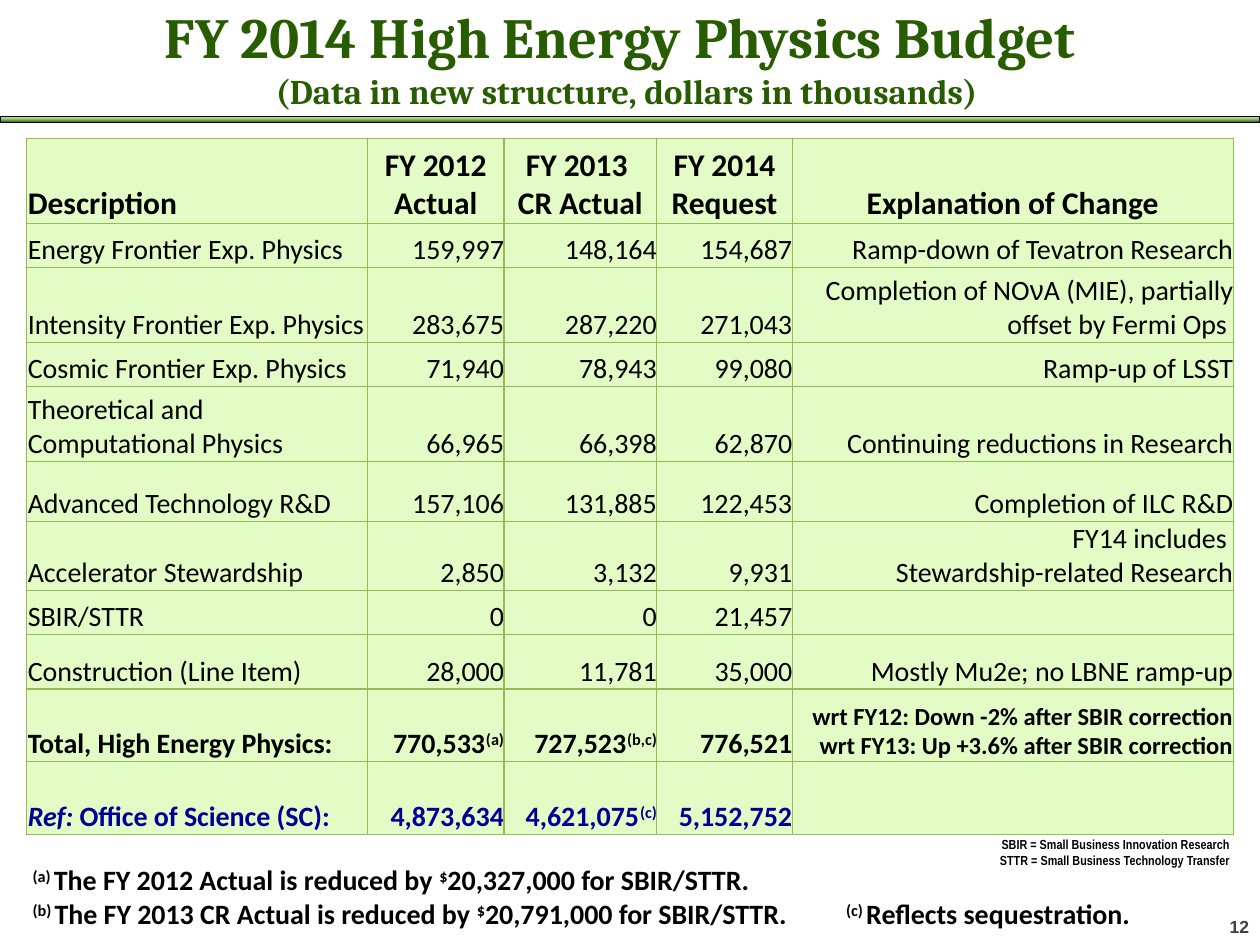
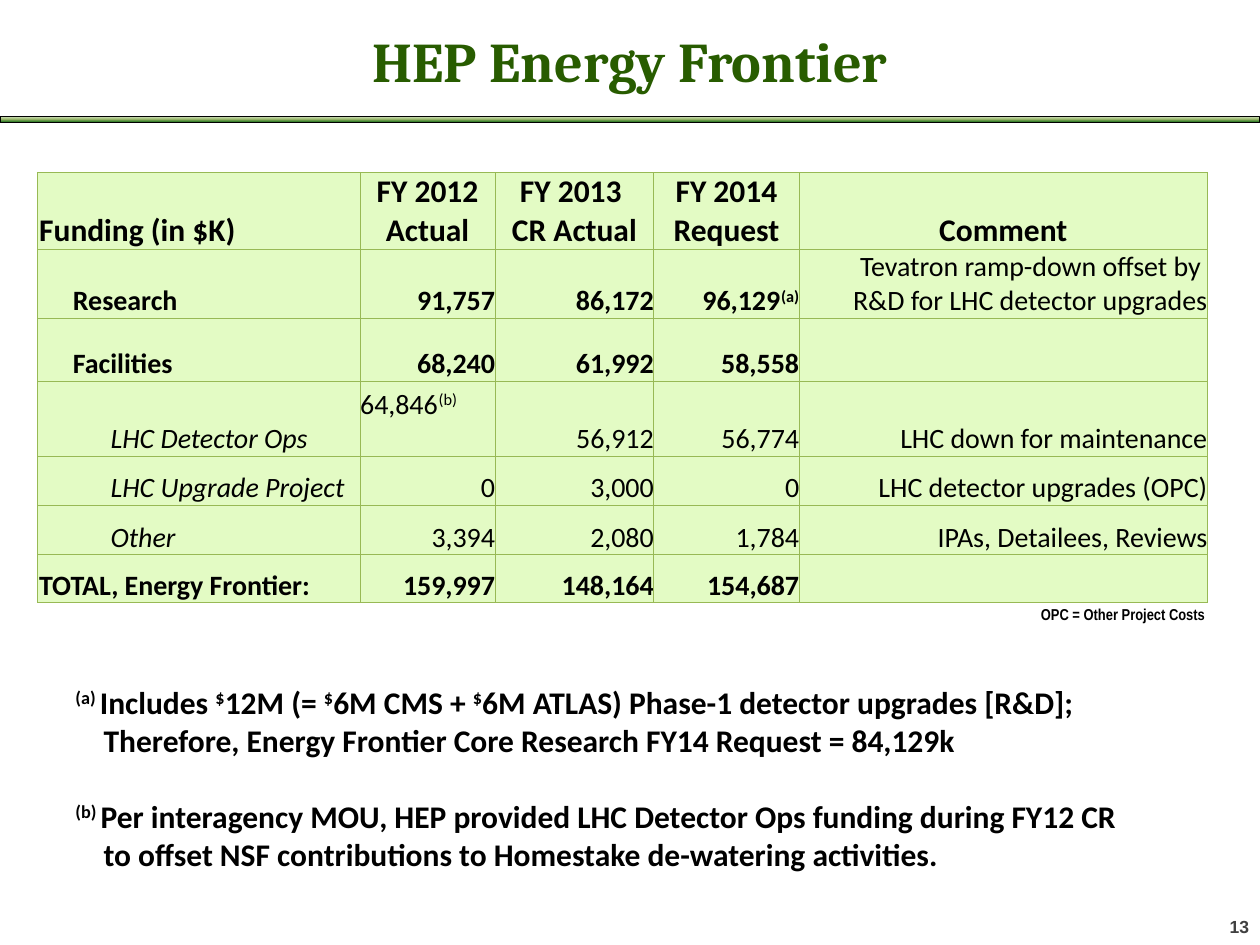
"""Build two budget slides with funding tables and footnotes."""
from copy import deepcopy

from lxml.etree import SubElement
from pptx import Presentation
from pptx.dml.color import RGBColor
from pptx.enum.shapes import MSO_SHAPE
from pptx.enum.text import MSO_ANCHOR, MSO_AUTO_SIZE, PP_ALIGN
from pptx.oxml.ns import qn
from pptx.util import Cm, Pt

TITLE_GREEN, INK, REF_BLUE, NUMBER_GREY = "285C00", "000000", "000099", "404040"
CELL_GREEN, GRID_GREEN = "E3FBC4", "98B955"
BAND_STOPS = [(0, "DDEBCF"), (0.5, "9CB86E"), (1, "156B13")]

TITLE = {"name": "Cambria", "size": Pt(32), "bold": True, "color": TITLE_GREEN}
BODY = {"name": "Calibri", "size": Pt(16), "bold": False, "color": INK}
BOLD = {"bold": True}
PLAIN = {"bold": False}
ITALIC = {"italic": True}
HEADER = {"size": Pt(18), "bold": True}
REFERENCE = {"bold": True, "color": REF_BLUE}
NUMBER = {"name": "Arial", "size": Pt(10), "bold": True, "color": NUMBER_GREY}
ABBREVIATION = {"name": "Arial Narrow", "size": Pt(7.5), "bold": True, "color": INK}
THIN_GAP = (" ", {"size": Pt(2)})
MARK_GAP = (" ", {"size": Pt(8)})
YEARS = ["FY 2012 Actual", "FY 2013 \nCR Actual", "FY 2014 Request"]

BUDGET_COLUMNS = [6.88, 2.75, 3.08, 2.73, 8.89]
BUDGET_ROWS = [
    (1.71, HEADER, ["Description", *YEARS, "Explanation of Change"]),
    (0.89, {}, ["Energy Frontier Exp. Physics", "159,997", "148,164", "154,687",
                "Ramp-down of Tevatron Research"]),
    (1.51, {}, ["Intensity Frontier Exp. Physics", "283,675", "287,220", "271,043",
                ["Completion of NO", ("ν", {"name": "Arial"}),
                 "A (MIE), partially offset by Fermi Ops "]]),
    (0.89, {}, ["Cosmic Frontier Exp. Physics", "71,940", "78,943", "99,080",
                "Ramp-up of LSST"]),
    (1.51, {}, ["Theoretical and Computational Physics", "66,965", "66,398", "62,870",
                "Continuing reductions in Research"]),
    (1.21, {}, ["Advanced Technology R&D", "157,106", "131,885", "122,453",
                "Completion of ILC R&D"]),
    (1.39, {}, ["Accelerator Stewardship", "2,850", "3,132", "9,931",
                "FY14 includes \nStewardship-related Research"]),
    (0.89, {}, ["SBIR/STTR", "0", "0", "21,457", ""]),
    (1.1, {}, ["Construction (Line Item)", "28,000", "11,781", "35,000",
               "Mostly Mu2e; no LBNE ramp-up"]),
    (1.46, BOLD, ["Total, High Energy Physics:", ["770,533", THIN_GAP, "^(a)^"],
                  ["727,523", THIN_GAP, "^(b,c)^"], "776,521",
                  [("wrt FY12: Down -2% after SBIR correction\n"
                    "wrt FY13: Up +3.6% after SBIR correction", {"size": Pt(14)})]]),
    (1.47, REFERENCE, [[("Ref: ", ITALIC), "Office of Science (SC):"], "4,873,634",
                       ["4,621,075", THIN_GAP, "^(c)^"], "5,152,752", ""]),
]

FRONTIER_COLUMNS = [6.5, 2.72, 3.2, 2.93, 8.23]
FRONTIER_ROWS = [
    (1.55, HEADER, ["Funding (in $K)", *YEARS, "Comment"]),
    (1.39, BOLD, ["Research", "91,757", "86,172", ["96,129", THIN_GAP, "^(a)^"],
                  [("Tevatron ramp-down offset by \nR&D for LHC detector upgrades", PLAIN)]]),
    (1.27, BOLD, ["Facilities", "68,240", "61,992", "58,558", ""]),
    (1.51, {}, [[("LHC Detector Ops", ITALIC)], ["64,846", THIN_GAP, "^(b)^"],
                "56,912", "56,774", "LHC down for maintenance"]),
    (0.99, {}, [[("LHC Upgrade Project", ITALIC)], "0", "3,000", "0",
                "LHC detector upgrades (OPC)"]),
    (0.99, {}, [[("Other", ITALIC)], "3,394", "2,080", "1,784",
                "IPAs, Detailees, Reviews"]),
    (0.97, BOLD, ["TOTAL, Energy Frontier:", "159,997", "148,164", "154,687", ""]),
]

BUDGET_NOTES = [
    "^(a)^", MARK_GAP, "The FY 2012 Actual is reduced by ^$^20,327,000 for SBIR/STTR.\n",
    "^(b)^", MARK_GAP, "The FY 2013 CR Actual is reduced by ^$^20,791,000 for SBIR/STTR.\t",
    "^(c)^", MARK_GAP, "Reflects sequestration.",
]
FRONTIER_NOTES = (
    "^(a) ^Includes ^$^12M (= ^$^6M CMS + ^$^6M ATLAS) Phase-1 detector upgrades [R&D];\n"
    "Therefore, Energy Frontier Core Research FY14 Request = 84,129k\n"
    "^(b) ^Per interagency MOU, HEP provided LHC Detector Ops funding during FY12 CR\n"
    "to offset NSF contributions to Homestake de-watering activities."
)


def rgb(value):
    """Turn a hex string into a colour."""
    return RGBColor.from_string(value)


def format_font(font, values):
    """Apply a dict of format values to a font."""
    for name, value in values.items():
        if name == "color":
            font.color.rgb = rgb(value)
        else:
            setattr(font, name, value)


def write(frame, content, style, align=PP_ALIGN.LEFT):
    """Write runs; a newline starts a paragraph and carets enclose superscripts."""
    paragraph = frame.paragraphs[0]
    paragraph.alignment = align
    for part in [content] if isinstance(content, str) else content:
        text, extra = (part, {}) if isinstance(part, str) else part
        for line_index, line in enumerate(text.split("\n")):
            if line_index:
                paragraph = frame.add_paragraph()
                paragraph.alignment = align
            for piece_index, piece in enumerate(line.split("^")):
                if piece:
                    run = paragraph.add_run()
                    run.text = piece
                    format_font(run.font, {**style, **extra})
                    if piece_index % 2:
                        run._r.get_or_add_rPr().set("baseline", "30000")


def add_text(slide, place, content, style, align=PP_ALIGN.LEFT, wrap=True):
    """Add a text box and return its frame."""
    frame = slide.shapes.add_textbox(*map(Cm, place)).text_frame
    frame.word_wrap = wrap
    write(frame, content, style, align)
    return frame


def set_title(slide, place, content):
    """Place and write the slide title."""
    title = slide.shapes.title
    title.left, title.top, title.width, title.height = map(Cm, place)
    frame = title.text_frame
    frame.auto_size = MSO_AUTO_SIZE.NONE
    frame.vertical_anchor = MSO_ANCHOR.MIDDLE
    write(frame, content, TITLE, PP_ALIGN.CENTER)


def add_band(slide):
    """Add the gradient band under the title."""
    band = slide.shapes.add_shape(MSO_SHAPE.RECTANGLE, *map(Cm, (0, 2.34, 25.4, 0.13)))
    band.shadow.inherit = False
    band.line.color.rgb = rgb(INK)
    band.line.width = Pt(0.5)
    band.fill.gradient()
    band.fill.gradient_angle = 270
    stop_list = band._element.spPr.find(qn("a:gradFill")).find(qn("a:gsLst"))
    stop_list.append(deepcopy(stop_list[0]))
    for stop, (position, color) in zip(band.fill.gradient_stops, BAND_STOPS):
        stop.position = position
        stop.color.rgb = rgb(color)


def style_cell(cell):
    """Give a cell its grid lines, fill, anchor and margins."""
    properties = cell._tc.get_or_add_tcPr()
    for side in ("a:lnL", "a:lnR", "a:lnT", "a:lnB"):
        border = SubElement(properties, qn(side), w=str(Pt(0.75)))
        SubElement(SubElement(border, qn("a:solidFill")), qn("a:srgbClr"), val=GRID_GREEN)
    cell.fill.solid()
    cell.fill.fore_color.rgb = rgb(CELL_GREEN)
    cell.vertical_anchor = MSO_ANCHOR.BOTTOM
    for side in ("left", "right", "top", "bottom"):
        setattr(cell, f"margin_{side}", 0)


def add_funding_table(slide, left, top, widths, rows):
    """Add a funding table and return it."""
    height = sum(row[0] for row in rows)
    table = slide.shapes.add_table(len(rows), len(widths), Cm(left), Cm(top),
                                   Cm(sum(widths)), Cm(height)).table
    table.first_row = table.horz_banding = False
    for column, width in zip(table.columns, widths):
        column.width = Cm(width)
    for row_index, (row_height, style, contents) in enumerate(rows):
        table.rows[row_index].height = Cm(row_height)
        for column_index, content in enumerate(contents):
            cell = table.cell(row_index, column_index)
            style_cell(cell)
            if column_index == 0:
                align = PP_ALIGN.LEFT
                cell.margin_left = Cm(0.03)
            else:
                align = PP_ALIGN.RIGHT if row_index else PP_ALIGN.CENTER
            write(cell.text_frame, content, {**BODY, **style}, align)
    return table


def add_slide(deck, number, title_place, title):
    """Add a slide with its title, band and number."""
    slide = deck.slides.add_slide(deck.slide_layouts[5])
    set_title(slide, title_place, title)
    add_band(slide)
    add_text(slide, (24.54, 18.34, 0.91, 0.69), str(number), NUMBER, wrap=False)
    return slide


def build_budget(deck):
    """Build the overall budget slide."""
    slide = add_slide(deck, 12, (0.46, 0.18, 24.33, 1.91), [
        ("FY 2014 High Energy Physics Budget \n", {"size": Pt(32.4)}),
        ("(Data in new structure, dollars in thousands)", {"size": Pt(19.8)})])
    add_funding_table(slide, 0.53, 2.79, BUDGET_COLUMNS, BUDGET_ROWS)
    notes = add_text(slide, (0.41, 17.27, 24.05, 1.63), BUDGET_NOTES, {**BODY, **BOLD})
    tabs = SubElement(notes.paragraphs[1]._p.get_or_add_pPr(), qn("a:tabLst"))
    SubElement(tabs, qn("a:tab"), pos=str(Cm(16.4)), algn="l")
    add_text(slide, (19.86, 16.74, 5.18, 0.89),
             "SBIR = Small Business Innovation Research\n"
             "STTR = Small Business Technology Transfer",
             ABBREVIATION, PP_ALIGN.RIGHT, wrap=False)


def build_frontier(deck):
    """Build the Energy Frontier slide."""
    slide = add_slide(deck, 13, (0, 0.48, 25.4, 1.47), "HEP Energy Frontier")
    table = add_funding_table(slide, 0.76, 3.48, FRONTIER_COLUMNS, FRONTIER_ROWS)
    for row_index, indent in enumerate([0.71, 0.71, 1.47, 1.47, 1.47], start=1):
        table.cell(row_index, 0).margin_left = Cm(indent)
    detector_ops = table.cell(3, 1)
    detector_ops.margin_bottom = Cm(0.7)
    detector_ops.text_frame.paragraphs[0].alignment = PP_ALIGN.LEFT
    notes = add_text(slide, (1.27, 13.64, 22.5, 4.88), FRONTIER_NOTES, {**BODY, **HEADER})
    for continuation in notes.paragraphs[1::2]:
        continuation._p.get_or_add_pPr().set("marL", str(Cm(0.57)))
    notes.paragraphs[2].space_before = Pt(22)
    add_text(slide, (20.7, 12.07, 3.84, 0.64), "OPC = Other Project Costs",
             {**ABBREVIATION, "size": Pt(9)}, PP_ALIGN.RIGHT, wrap=False)


def main():
    """Build and save the deck."""
    deck = Presentation()
    deck.slide_width, deck.slide_height = Cm(25.4), Cm(19.05)
    build_budget(deck)
    build_frontier(deck)
    deck.save("out.pptx")


if __name__ == "__main__":
    main()
